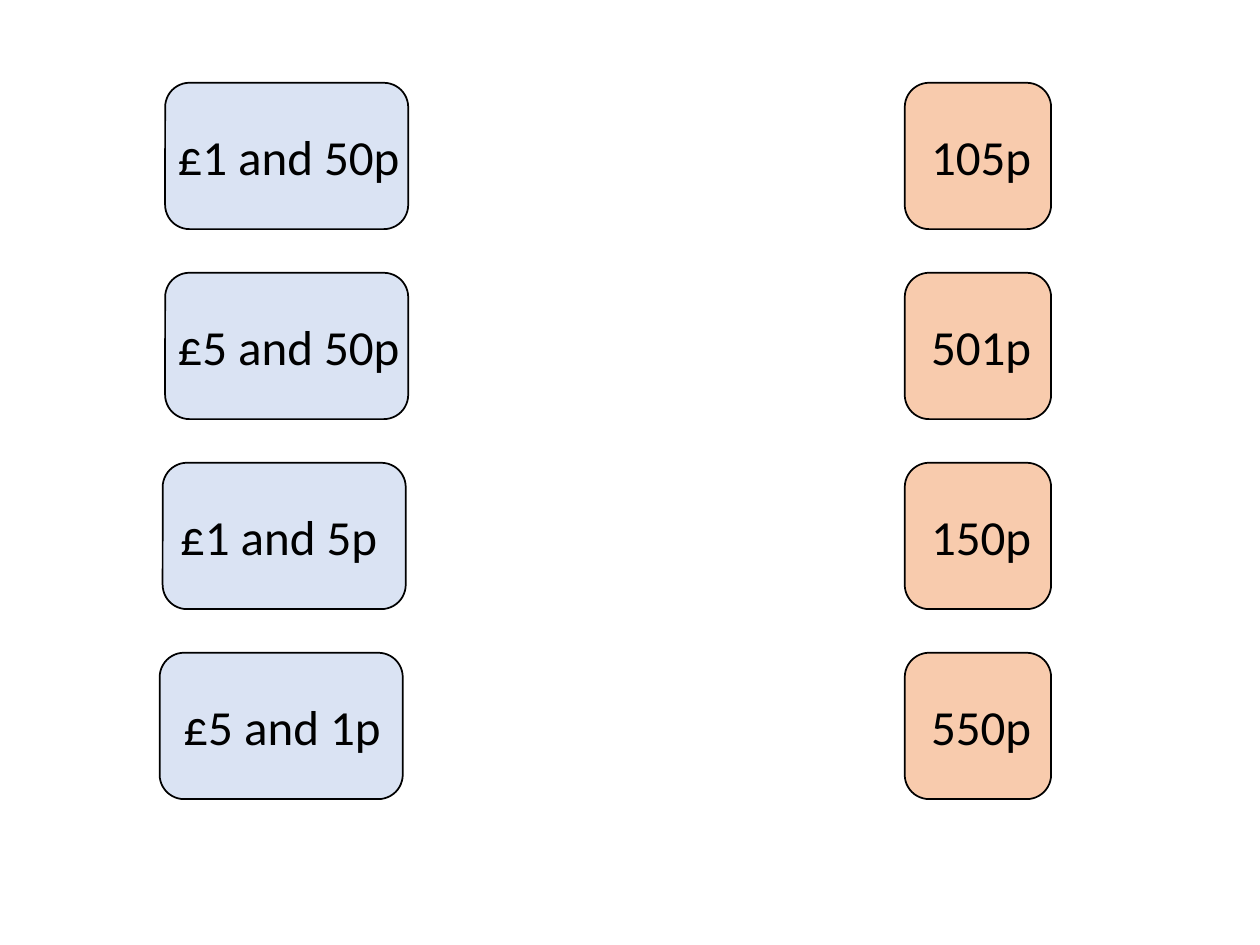
from dataclasses import dataclass

from pptx import Presentation
from pptx.dml.color import RGBColor
from pptx.enum.shapes import MSO_SHAPE
from pptx.enum.text import MSO_AUTO_SIZE
from pptx.shapes.shapetree import SlideShapes
from pptx.util import Cm, Pt

ROUND = MSO_SHAPE.ROUNDED_RECTANGLE
GROW = MSO_AUTO_SIZE.SHAPE_TO_FIT_TEXT


@dataclass(frozen=True)
class Theme:
    blue: RGBColor = RGBColor(0xDA, 0xE3, 0xF3)
    peach: RGBColor = RGBColor(0xF8, 0xCB, 0xAD)
    ink: RGBColor = RGBColor(0, 0, 0)
    font: str = "Calibri"
    size: Pt = Pt(28)
    line: Pt = Pt(1)


@dataclass(frozen=True)
class Style:
    fill: RGBColor
    width: float
    label: float


@dataclass(frozen=True)
class Card:
    text: str
    left: float
    inset: float


THEME = Theme()
COINS = Style(THEME.blue, 4.9, 5.87)
PENCE = Style(THEME.peach, 2.95, 2.67)
TOP, STEP, HEIGHT = 1.67, 3.83, 2.95
DROP, TALL = 0.75, 1.45

LEFT = [
    Card("£1 and 50p", 3.33, 0),
    Card("£5 and 50p", 3.33, 0),
    Card("£1 and 5p", 3.28, 0.1),
    Card("£5 and 1p", 3.22, 0.23),
]
RIGHT = [Card(text, 18.24, 0.28) for text in ("105p", "501p", "150p", "550p")]


def draw_card(shapes: SlideShapes, card: Card, style: Style, top: float) -> None:
    group = shapes.add_group_shape().shapes
    box = group.add_shape(ROUND, Cm(card.left), Cm(top), Cm(style.width), Cm(HEIGHT))
    box.shadow.inherit = False
    box.fill.solid()
    box.fill.fore_color.rgb = style.fill
    box.line.color.rgb = THEME.ink
    box.line.width = THEME.line

    label = group.add_textbox(
        Cm(card.left + card.inset), Cm(top + DROP), Cm(style.label), Cm(TALL)
    )
    frame = label.text_frame
    frame.word_wrap = True
    frame.auto_size = GROW
    run = frame.paragraphs[0].add_run()
    run.text = card.text
    run.font.name = THEME.font
    run.font.size = THEME.size
    run.font.color.rgb = THEME.ink


def draw_column(shapes: SlideShapes, cards: list[Card], style: Style) -> None:
    for row, card in enumerate(cards):
        draw_card(shapes, card, style, TOP + row * STEP)


def main() -> None:
    deck = Presentation()
    deck.slide_width, deck.slide_height = Cm(25.4), Cm(19.05)
    slide = deck.slides.add_slide(deck.slide_layouts[6])
    draw_column(slide.shapes, LEFT, COINS)
    draw_column(slide.shapes, RIGHT, PENCE)
    deck.save("out.pptx")


if __name__ == "__main__":
    main()
